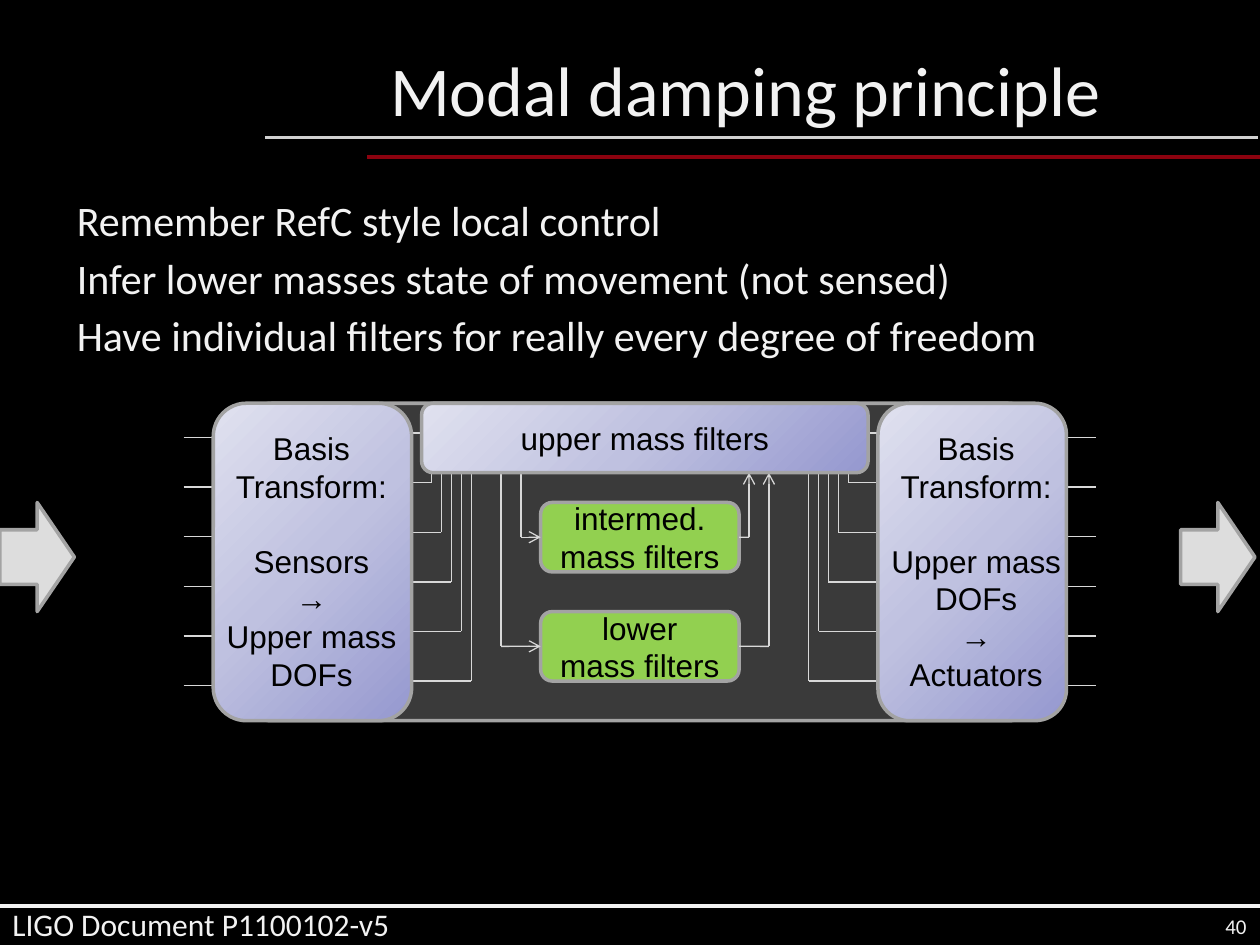
"""Build the modal damping principle slide with its signal flow diagram."""
from copy import deepcopy
from dataclasses import dataclass

from lxml import etree
from pptx import Presentation
from pptx.dml.color import RGBColor
from pptx.enum.shapes import MSO_CONNECTOR, MSO_SHAPE
from pptx.enum.text import MSO_ANCHOR, PP_ALIGN
from pptx.oxml.ns import qn
from pptx.util import Cm, Pt

STRAIGHT = MSO_CONNECTOR.STRAIGHT
ROUNDED = MSO_SHAPE.ROUNDED_RECTANGLE
RIGHT_ARROW = MSO_SHAPE.RIGHT_ARROW
TOP, MIDDLE = MSO_ANCHOR.TOP, MSO_ANCHOR.MIDDLE
LEFT, CENTER, RIGHT = PP_ALIGN.LEFT, PP_ALIGN.CENTER, PP_ALIGN.RIGHT
LEFT_SIDE, RIGHT_SIDE = 1, 3

BLACK = RGBColor(0x00, 0x00, 0x00)
WHITE = RGBColor(0xF2, 0xF2, 0xF2)
RED = RGBColor(0x8C, 0x02, 0x0F)
RULE_GRAY = RGBColor(0xD1, 0xD1, 0xD1)
WIRE_GRAY = RGBColor(0xD8, 0xD8, 0xD8)
BORDER_GRAY = RGBColor(0xA3, 0xA3, 0xA3)
ARROW_GRAY = RGBColor(0xDD, 0xDD, 0xDD)
PANEL_GRAY = RGBColor(0x3A, 0x3A, 0x3A)
GREEN = RGBColor(0x92, 0xD0, 0x50)
LAVENDER = (
    (0, RGBColor(0x95, 0x98, 0xCF)),
    (0.5, RGBColor(0xBF, 0xC1, 0xE0)),
    (1, RGBColor(0xE0, 0xE1, 0xEF)),
)

CHANNELS = 6
CHANNEL_PITCH = 1.0
WIRE_STEP = 0.2
STUB_TOP, STUB_LENGTH = 8.82, 0.6
WIRE_TOP = 8.73
DIAGRAM_TOP, DIAGRAM_HEIGHT = 8.13, 6.4
FILTER_HEIGHT = 1.4
FILTER_BOTTOM = DIAGRAM_TOP + FILTER_HEIGHT
FILTER_LEFT, FILTER_WIDTH = 10.9, 4.0


@dataclass(frozen=True)
class Box:
    """A rectangle in centimetres."""

    left: float
    top: float
    width: float
    height: float

    @property
    def lengths(self) -> tuple[Cm, ...]:
        """Return the rectangle as slide lengths."""
        return Cm(self.left), Cm(self.top), Cm(self.width), Cm(self.height)


@dataclass(frozen=True)
class Transform:
    """A basis transform block with its text, stubs and filter wires."""

    box: Box
    lines: tuple[str, ...]
    stub_left: float
    wire_start: float
    first_wire: float
    direction: int


@dataclass(frozen=True)
class LocalFilter:
    """A lower stage filter and the columns of its feed and return wires."""

    text: str
    top: float
    feed: float
    back: float


TRANSFORMS = (
    Transform(Box(4.3, DIAGRAM_TOP, 4, DIAGRAM_HEIGHT),
              ("Basis", "Transform:", "Sensors", "→", "Upper mass", "DOFs"),
              3.7, 7.3, 8.7, 1),
    Transform(Box(17.7, DIAGRAM_TOP, 3.8, DIAGRAM_HEIGHT),
              ("Basis", "Transform:", "Upper mass", "DOFs", "→", "Actuators"),
              21.5, 18.5, 17.1, -1),
)
LOCAL_FILTERS = (
    LocalFilter("intermed.\vmass filters", 10.13, 10.5, 15.1),
    LocalFilter("lower\vmass filters", 12.33, 10.1, 15.5),
)


def add_line(slide, start: tuple, end: tuple, color=WIRE_GRAY, width=0.75, arrow=False):
    """Draw a straight line between two points in centimetres."""
    connector = slide.shapes.add_connector(STRAIGHT, *(Cm(value) for value in start + end))
    connector.line.color.rgb = color
    connector.line.width = Pt(width)
    properties = connector._element.spPr
    if arrow:
        etree.SubElement(properties.find(qn("a:ln")), qn("a:tailEnd"), type="arrow")
    etree.SubElement(properties, qn("a:effectLst"))
    return connector


def write_text(shape, text: str, size: float, color=BLACK, font="Arial",
               align=CENTER, anchor=MIDDLE, wrap=True) -> None:
    """Put formatted text into a shape."""
    frame = shape.text_frame
    frame.text = text
    frame.word_wrap = wrap
    frame.vertical_anchor = anchor
    for paragraph in frame.paragraphs:
        paragraph.alignment = align
        for run in paragraph.runs:
            run.font.name = font
            run.font.size = Pt(size)
            run.font.color.rgb = color


def add_text(slide, box: Box, text: str, size: float, **style):
    """Add a text box."""
    shape = slide.shapes.add_textbox(*box.lengths)
    write_text(shape, text, size, **style)
    return shape


def add_block(slide, kind, box: Box, color=None):
    """Add a bordered shape, lavender gradient unless a color is given."""
    shape = slide.shapes.add_shape(kind, *box.lengths)
    shape.shadow.inherit = False
    shape.line.color.rgb = BORDER_GRAY
    shape.line.width = Pt(2)
    if color is not None:
        shape.fill.solid()
        shape.fill.fore_color.rgb = color
        return shape
    shape.fill.gradient()
    shape.fill.gradient_angle = 135
    stops = shape._element.spPr.find(".//" + qn("a:gsLst"))
    stops.insert(1, deepcopy(stops[0]))
    for stop, (position, stop_color) in zip(shape.fill.gradient_stops, LAVENDER):
        stop.position = position
        stop.color.rgb = stop_color
    return shape


def add_transform(slide, transform: Transform) -> None:
    """Draw the wires of a transform, then its block and text."""
    for channel in range(CHANNELS):
        y = WIRE_TOP + channel * CHANNEL_PITCH
        column = (channel or CHANNELS - 1) - 1
        x = transform.first_wire + transform.direction * column * WIRE_STEP
        add_line(slide, (transform.wire_start, y), (x, y))
        if channel:
            add_line(slide, (x, y), (x, FILTER_BOTTOM))
    add_block(slide, ROUNDED, transform.box)
    text_box = add_text(slide, Box(transform.box.left, 8.53, 3.96, 5.64),
                        "\n".join(transform.lines), 18, anchor=TOP, wrap=False)
    text_box.text_frame.paragraphs[2].space_before = Pt(21)


def add_local_filter(slide, stage: LocalFilter) -> None:
    """Draw a lower stage filter joined to the upper mass filters."""
    block = add_block(slide, ROUNDED, Box(FILTER_LEFT, stage.top, FILTER_WIDTH, FILTER_HEIGHT),
                      GREEN)
    write_text(block, stage.text, 18)
    y = stage.top + FILTER_HEIGHT / 2
    add_line(slide, (stage.feed, FILTER_BOTTOM), (stage.feed, y))
    feed = add_line(slide, (stage.feed, y), (FILTER_LEFT, y), arrow=True)
    feed.end_connect(block, LEFT_SIDE)
    back = add_line(slide, (stage.back, y), (FILTER_LEFT + FILTER_WIDTH, y))
    back.end_connect(block, RIGHT_SIDE)
    add_line(slide, (stage.back, y), (stage.back, FILTER_BOTTOM), arrow=True)


def add_page_text(slide) -> None:
    """Add the rules, title, statements and footer."""
    add_line(slide, (0, 18.26), (25.4, 18.26), WHITE, 2)
    add_line(slide, (7.4, 3.17), (25.4, 3.17), RED, 2)
    add_line(slide, (5.35, 2.77), (25.35, 2.77), RULE_GRAY, 2)
    style = {"color": WHITE, "font": "Calibri"}
    add_text(slide, Box(3.91, 0.79, 18.52, 2), "Modal damping principle", 40,
             align=RIGHT, **style)
    add_text(slide, Box(19.46, 18.26, 5.92, 0.81), "40", 12, align=RIGHT, **style)
    statements = add_text(
        slide, Box(1.3, 3.8, 23.6, 3.8),
        "Remember RefC style local control\n"
        "Infer lower masses state of movement (not sensed)\n"
        "Have individual filters for really every degree of freedom",
        24, align=LEFT, anchor=TOP, **style)
    for paragraph in statements.text_frame.paragraphs[1:]:
        paragraph.space_before = Pt(4)
    add_text(slide, Box(0, 18.11, 8.2, 1.02), "LIGO Document P1100102-v5", 18,
             align=LEFT, anchor=TOP, wrap=False, **style)


def add_diagram(slide) -> None:
    """Draw the signal flow from sensors to actuators."""
    for transform in TRANSFORMS:
        for channel in range(CHANNELS):
            y = STUB_TOP + channel * CHANNEL_PITCH
            add_line(slide, (transform.stub_left, y), (transform.stub_left + STUB_LENGTH, y))
    panel = add_block(slide, ROUNDED, Box(4.9, DIAGRAM_TOP, 16, DIAGRAM_HEIGHT), PANEL_GRAY)
    panel.adjustments[0] = 0.09
    for left in (0, 23.8):
        add_block(slide, RIGHT_ARROW, Box(left, 10.13, 1.5, 2.2), ARROW_GRAY)
    for transform in TRANSFORMS:
        add_transform(slide, transform)
    for stage in LOCAL_FILTERS:
        add_local_filter(slide, stage)
    upper = add_block(slide, ROUNDED, Box(8.5, DIAGRAM_TOP, 9, FILTER_HEIGHT))
    write_text(upper, "upper mass filters", 18)


def main() -> None:
    """Build and save the presentation."""
    presentation = Presentation()
    presentation.slide_width, presentation.slide_height = Cm(25.4), Cm(19.05)
    slide = presentation.slides.add_slide(presentation.slide_layouts[6])
    slide.background.fill.solid()
    slide.background.fill.fore_color.rgb = BLACK
    add_page_text(slide)
    add_diagram(slide)
    presentation.save("out.pptx")


if __name__ == "__main__":
    main()
